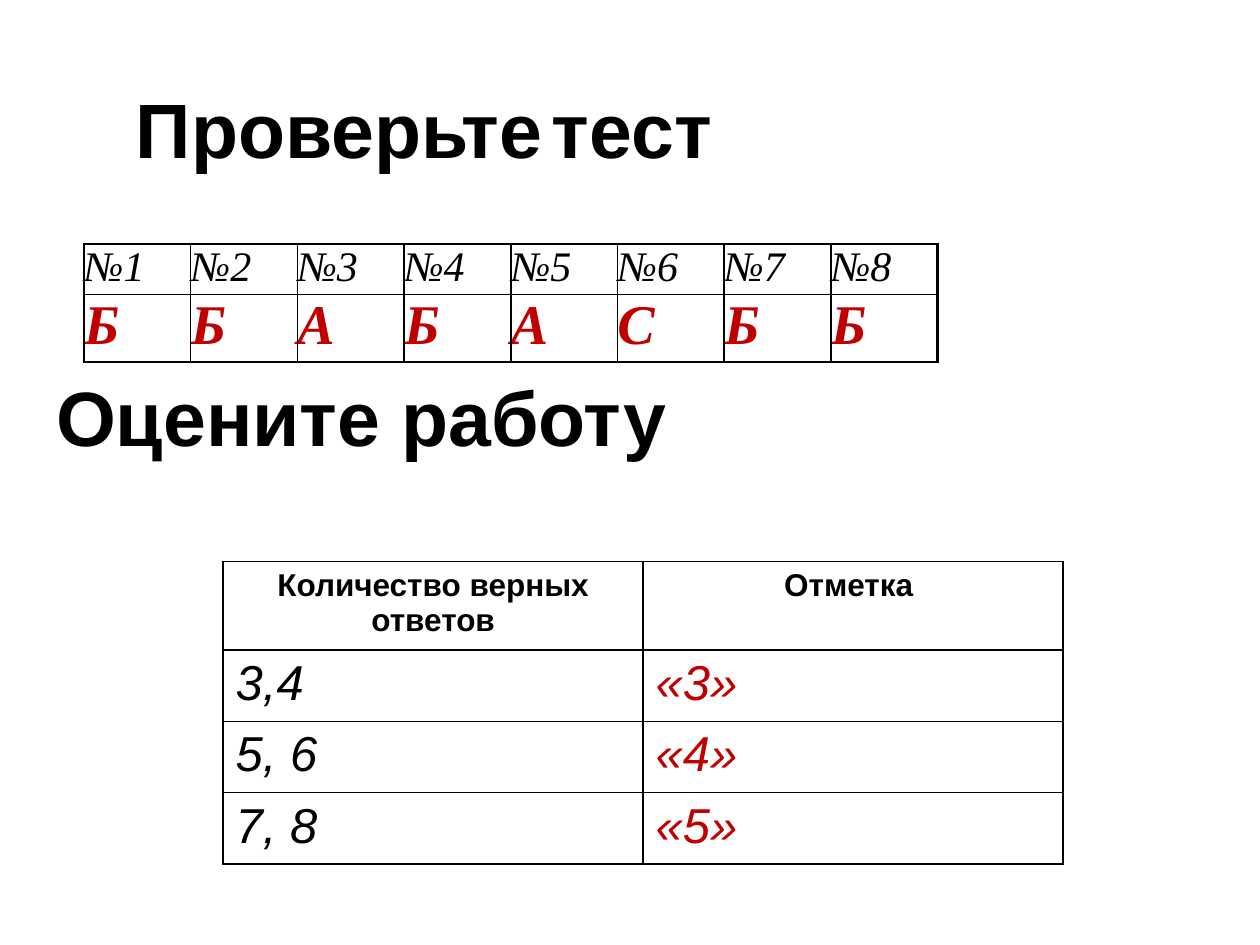
import pptx
import pptx.dml.color
import pptx.enum.text
import pptx.oxml
import pptx.oxml.ns
import pptx.util

Pt = pptx.util.Pt
ALIGN = pptx.enum.text.PP_ALIGN
COLORS = {"text": "000000", "answer": "C00000", "paper": "FFFFFF"}


def rgb(name):
    return pptx.dml.color.RGBColor.from_string(COLORS[name])


def add_text(para, text, size=18, font="Arial", color="text", bold=False,
             italic=False, align=ALIGN.LEFT):
    para.alignment = align
    span = para.add_run()
    span.text = text
    span.font.name = font
    span.font.size = Pt(size)
    span.font.bold = bold
    span.font.italic = italic
    span.font.color.rgb = rgb(color)


def place(shape, left, top, width, height):
    shape.left, shape.top = Pt(left), Pt(top)
    shape.width, shape.height = Pt(width), Pt(height)


def set_frame(frame):
    frame.word_wrap = True
    frame.auto_size = pptx.enum.text.MSO_AUTO_SIZE.NONE
    frame.vertical_anchor = pptx.enum.text.MSO_ANCHOR.TOP


def add_title(page):
    title = page.shapes.title
    place(title, 70.5, 43, 420, 60.5)
    set_frame(title.text_frame)
    para = title.text_frame.paragraphs[0]
    for text, size, bold in (("Проверьте", 44, True), (" ", 18, False), ("тест", 44, True)):
        add_text(para, text, size=size, bold=bold)


def add_heading(page, text):
    box = page.shapes.add_textbox(Pt(25), Pt(207.5), Pt(629.5), Pt(113.5))
    set_frame(box.text_frame)
    add_text(box.text_frame.paragraphs[0], text, size=44, bold=True)


def set_borders(cell, widths):
    properties = cell._tc.get_or_add_tcPr()
    for side, width in zip("LRTB", widths):
        properties.append(pptx.oxml.parse_xml(
            f'<a:ln{side} {pptx.oxml.ns.nsdecls("a")} w="{Pt(width)}"><a:solidFill>'
            f'<a:srgbClr val="{COLORS["text"]}"/></a:solidFill></a:ln{side}>'))


def add_grid(page, rows, left, top, column_width, row_heights, cell_format,
             outer=1, inner=1, margin=None):
    """Add a white table; cell_format(row, column) gives the text format."""
    last_row, last_column = len(rows) - 1, len(rows[0]) - 1
    frame = page.shapes.add_table(
        len(rows), len(rows[0]), Pt(left), Pt(top),
        Pt(column_width * len(rows[0])), Pt(sum(row_heights)))
    table = frame.table
    table.first_row = table.horz_banding = False
    for column in table.columns:
        column.width = Pt(column_width)
    for r, texts in enumerate(rows):
        table.rows[r].height = Pt(row_heights[r])
        for c, text in enumerate(texts):
            cell = table.cell(r, c)
            edges = (c == 0, c == last_column, r == 0, r == last_row)
            set_borders(cell, [outer if edge else inner for edge in edges])
            cell.fill.solid()
            cell.fill.fore_color.rgb = rgb("paper")
            if margin is not None:
                cell.margin_left = cell.margin_right = Pt(margin)
                cell.margin_top = cell.margin_bottom = Pt(margin)
            add_text(cell.text_frame.paragraphs[0], text, **cell_format(r, c))


def answer_format(row, column):
    style = {"font": "Times New Roman", "italic": True}
    if row == 0:
        return {**style, "size": 24}
    return {**style, "size": 32, "bold": True, "color": "answer"}


def mark_format(row, column):
    if row == 0:
        return {"size": 18, "bold": True, "align": ALIGN.CENTER}
    return {"size": 28, "italic": True, "color": "answer" if column else "text"}


def main():
    deck = pptx.Presentation()
    deck.slide_width, deck.slide_height = Pt(720), Pt(540)
    page = deck.slides.add_slide(deck.slide_layouts[5])
    add_title(page)
    answers = "ББАБАСББ"
    numbers = [f"№{number}" for number in range(1, len(answers) + 1)]
    add_grid(page, [numbers, answers], 48, 139.5, 61, [28.8, 38.4],
             answer_format, outer=1.5, margin=0)
    add_heading(page, "Оцените работу")
    marks = [("Количество верных ответов", "Отметка "),
             ("3,4", "«3»"), ("5, 6", "«4»"), ("7, 8", "«5»")]
    add_grid(page, marks, 127.5, 321, 240, [50.4] + [40.8] * 3, mark_format)
    deck.save("out.pptx")


if __name__ == "__main__":
    main()
